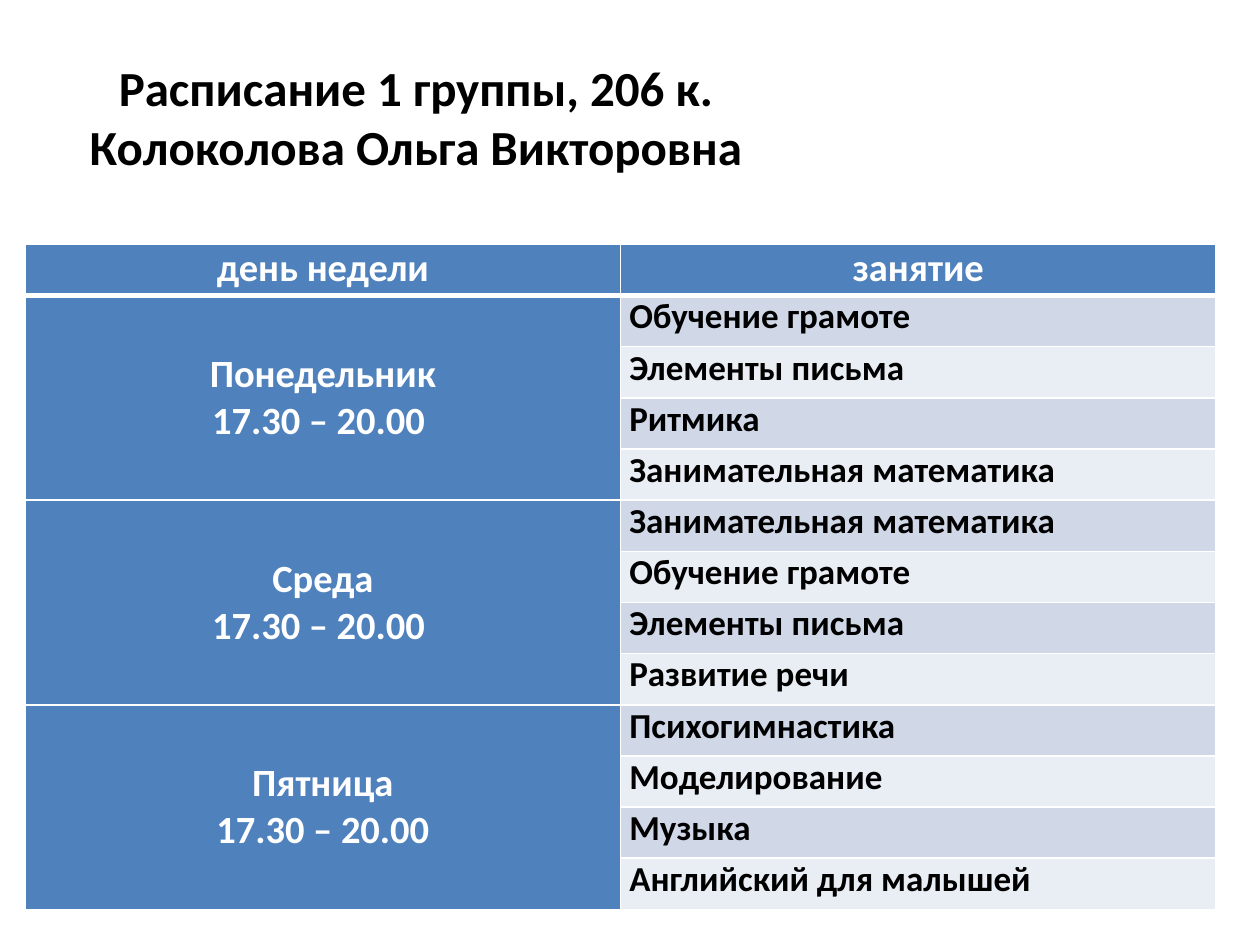
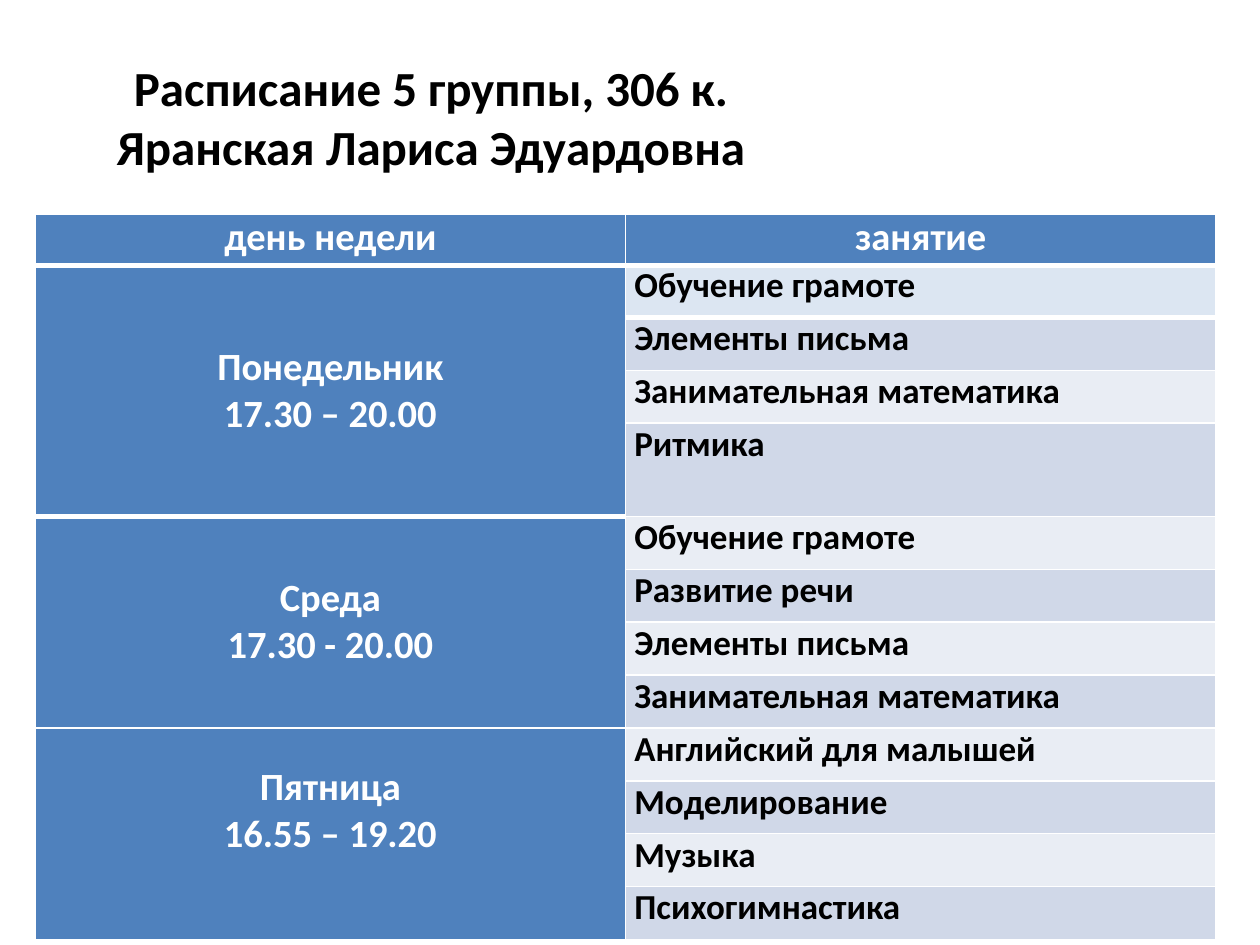
import pptx
import pptx.util
import pptx.dml.color
import pptx.enum.text
import pptx.oxml
import pptx.oxml.ns

COLOURS = {
    "title": "000000",
    "lesson": "000000",
    "day": "FFFFFF",
    "border": "FFFFFF",
    "accent": "4F81BD",
    "dark band": "D0D8E8",
    "light band": "E9EDF4",
    "first band": "DCE6F2",
}
ALIGN = pptx.enum.text.PP_ALIGN
ANCHOR = pptx.enum.text.MSO_ANCHOR
FONT = {"name": "Calibri", "bold": True}
TITLE = {"size": pptx.util.Pt(28), "align": ALIGN.CENTER, "colour": "title"}
DAY = {"size": pptx.util.Pt(22), "align": ALIGN.CENTER, "colour": "day"}
LESSON = {"size": pptx.util.Pt(20), "align": ALIGN.LEFT, "colour": "lesson"}
HEADINGS = ["день недели", "занятие"]
LESSONS_PER_DAY = 4
THIN, THICK = pptx.util.Pt(1), pptx.util.Pt(3)

deck = pptx.Presentation()
deck.slide_width = pptx.util.Inches(10)
deck.slide_height = pptx.util.Inches(7.5)
GRID = deck.slide_width // 100  # the slide is 100 columns by 75 rows

# Every length below is counted in grid units.
schedules = [
    {
        "title": "Расписание 1 группы, 206 к.\vКолоколова Ольга Викторовна",
        "title_width": 56,
        "left": 2, "top": 19.4, "column": 47.25,
        "header_height": 4.06, "header_apart": False,
        "lesson_heights": [4.06] * 12,
        "bands": ["dark band", "light band"] * 6,
        "friday_bottom": 0,
        "days": [
            ("Понедельник", "17.30 – 20.00 ",
             ["Обучение грамоте", "Элементы письма", "Ритмика",
              "Занимательная математика"]),
            ("Среда", "17.30 – 20.00 ",
             ["Занимательная математика", "Обучение грамоте",
              "Элементы письма", "Развитие речи"]),
            ("Пятница", "17.30 – 20.00",
             ["Психогимнастика", "Моделирование", "Музыка",
              "Английский для малышей"]),
        ],
    },
    {
        "title": "Расписание 5 группы, 306 к.\vЯранская Лариса Эдуардовна",
        "title_width": 58.4,
        "left": 2.8, "top": 17, "column": 46.85,
        "header_height": 4.06, "header_apart": True,
        "lesson_heights": [4.2] * 3 + [7.4] + [4.2] * 8,
        "bands": ["first band", "dark band"] + ["light band", "dark band"] * 5,
        "friday_bottom": 3.7,
        "days": [
            ("Понедельник", "17.30 – 20.00",
             ["Обучение грамоте", "Элементы письма",
              "Занимательная математика", "Ритмика"]),
            ("Среда", "17.30 - 20.00",
             ["Обучение грамоте", "Развитие речи", "Элементы письма",
              "Занимательная математика"]),
            ("Пятница", "16.55 – 19.20",
             ["Английский для малышей", "Моделирование", "Музыка",
              "Психогимнастика"]),
        ],
    },
]


def add_grid(slide, left, top, column, heights):
    """Add a two-column table with white borders, thick under its first row."""
    frame = slide.shapes.add_table(
        len(heights), 2, *[round(n * GRID) for n in (left, top, 2 * column, sum(heights))])
    table = frame.table
    table.horz_banding = False
    table.first_row = False
    for width in table.columns:
        width.width = round(column * GRID)
    for index, height in enumerate(heights):
        table.rows[index].height = round(height * GRID)
        for cell in table.rows[index].cells:
            cell.margin_left = cell.margin_right = round(0.7 * GRID)
            cell.margin_top = cell.margin_bottom = 0
            for side in "LRB":
                weight = THICK if side == "B" and index == 0 else THIN
                cell._tc.get_or_add_tcPr().append(pptx.oxml.parse_xml(
                    f'<a:ln{side} {pptx.oxml.ns.nsdecls("a")} w="{weight}"><a:solidFill>'
                    f'<a:srgbClr val="{COLOURS["border"]}"/></a:solidFill></a:ln{side}>'))
    return table


def write(holder, text, style, fill=None):
    """Put styled text in a cell or a text box, and colour a cell behind it."""
    holder.text_frame.text = text
    for paragraph in holder.text_frame.paragraphs:
        paragraph.alignment = style["align"]
        for run in paragraph.runs:
            for name, value in {**FONT, "size": style["size"]}.items():
                setattr(run.font, name, value)
            run.font.color.rgb = pptx.dml.color.RGBColor.from_string(COLOURS[style["colour"]])
    if fill:
        holder.fill.solid()
        holder.fill.fore_color.rgb = pptx.dml.color.RGBColor.from_string(COLOURS[fill])


for schedule in schedules:
    slide = deck.slides.add_slide(deck.slide_layouts[6])
    left, top, column = schedule["left"], schedule["top"], schedule["column"]

    title = slide.shapes.add_textbox(
        *[round(n * GRID) for n in (5, 3, schedule["title_width"], 12.5)])
    title.text_frame.word_wrap = True
    title.text_frame.vertical_anchor = ANCHOR.MIDDLE
    write(title, schedule["title"], TITLE)

    header_height, heights = schedule["header_height"], schedule["lesson_heights"]
    if schedule["header_apart"]:
        lessons_table = add_grid(slide, left, top + 4, column, heights)
        header_table = add_grid(slide, left, top, column, [header_height])
        first_row = 0
    else:
        lessons_table = add_grid(slide, left, top, column, [header_height] + heights)
        header_table = lessons_table
        first_row = 1

    for heading, cell in zip(HEADINGS, header_table.rows[0].cells):
        write(cell, heading, DAY, "accent")

    for number, (day, hours, lessons) in enumerate(schedule["days"]):
        day_row = first_row + number * LESSONS_PER_DAY
        day_cell = lessons_table.cell(day_row, 0)
        day_cell.merge(lessons_table.cell(day_row + LESSONS_PER_DAY - 1, 0))
        write(day_cell, f"{day}\n{hours}", DAY, "accent")
        day_cell.vertical_anchor = ANCHOR.MIDDLE
        for offset, lesson in enumerate(lessons):
            band = schedule["bands"][number * LESSONS_PER_DAY + offset]
            write(lessons_table.cell(day_row + offset, 1), lesson, LESSON, band)
    day_cell.margin_bottom = round(schedule["friday_bottom"] * GRID)

deck.save("out.pptx")
